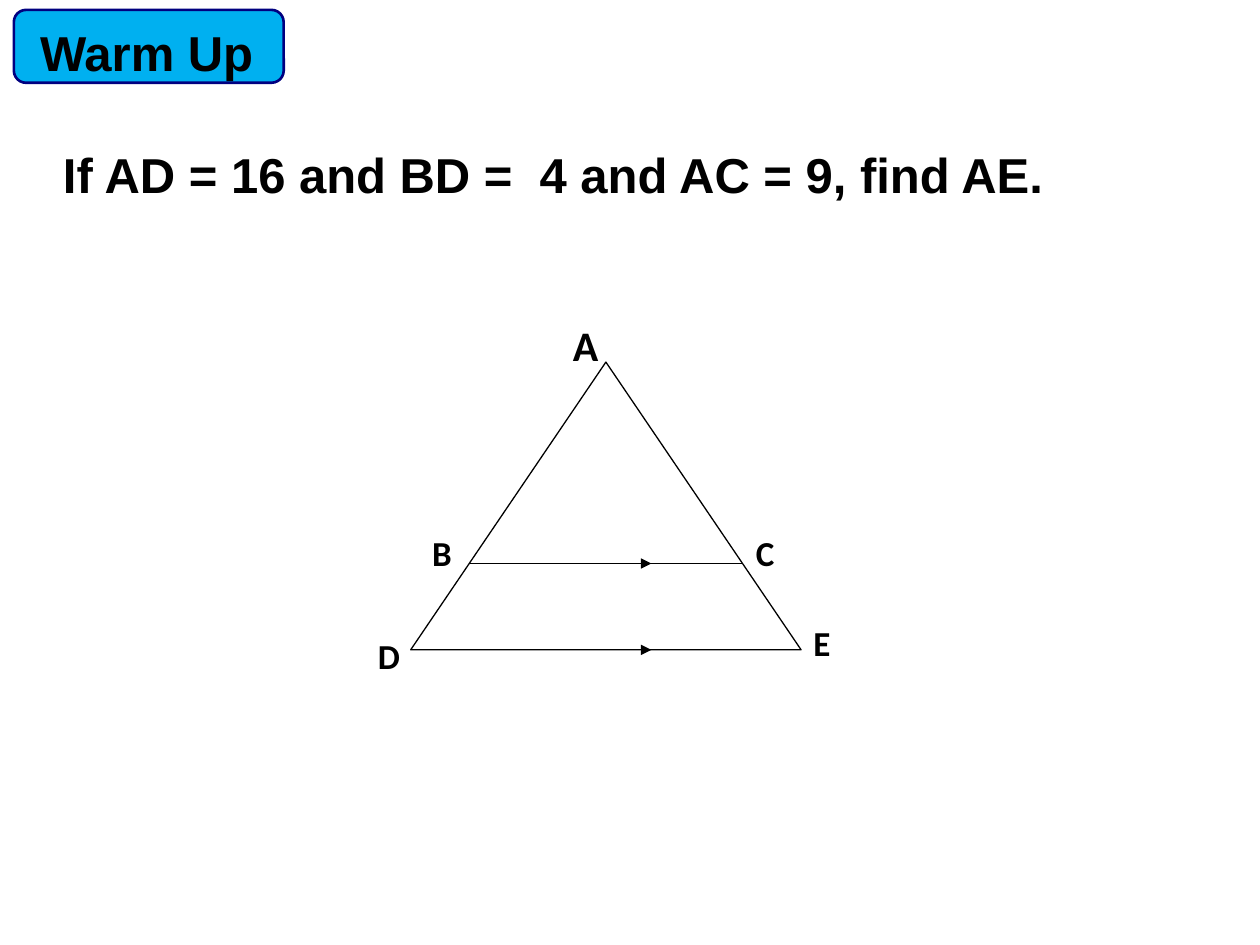
from lxml import etree
from pptx import Presentation
from pptx import util as u
from pptx.dml.color import RGBColor
from pptx.enum import shapes as s
from pptx.oxml.ns import qn

HUES = {"ink": "000000", "paper": "FFFFFF", "sky": "00B0F0", "navy": "000080"}


def tint(name):
    return RGBColor.from_string(HUES[name])


def write(host, words, box, size=28, font="Arial", lead=None, after=0, top=0.13):
    """Add a bold text box; box is left, top, width, height in cm."""
    frame = host.add_textbox(*map(u.Cm, box)).text_frame
    frame.word_wrap = True
    frame.margin_top = u.Cm(top)
    para = frame.paragraphs[0]
    para.line_spacing = lead
    para.space_after = u.Pt(after)
    run = para.add_run()
    run.text = words
    run.font.size = u.Pt(size)
    run.font.name = font
    run.font.bold = True
    run.font.color.rgb = tint("ink")


def block(host, kind, box, fill, edge, width):
    shape = host.add_shape(kind, *map(u.Cm, box))
    shape.shadow.inherit = False
    shape.fill.solid()
    shape.fill.fore_color.rgb = tint(fill)
    shape.line.color.rgb = tint(edge)
    shape.line.width = u.Pt(width)


def rule(host, start, end, y, arrow=False):
    """Add a level line, with an arrowhead at its end if asked."""
    line = host.add_connector(s.MSO_CONNECTOR.STRAIGHT,
                              *map(u.Cm, (start, y, end, y)))
    line.line.color.rgb = tint("ink")
    line.line.width = u.Pt(0.75)
    if arrow:
        edge = line.line._get_or_add_ln()
        etree.SubElement(edge, qn("a:tailEnd"), type="triangle")
    etree.SubElement(line._element.spPr, qn("a:effectLst"))


def banner(host, box):
    left, top, wide, high = box
    block(host, s.MSO_SHAPE.ROUNDED_RECTANGLE, box, "sky", "navy", 1.5)
    write(host, "Warm Up", (left + 0.28, top + 0.03, wide + 0.15, high), top=0.23)


def figure(host, box):
    """Draw triangle ADE, cut by BC parallel to DE."""
    left, top, wide, high = box
    group = host.add_group_shape().shapes
    block(group, s.MSO_SHAPE.ISOSCELES_TRIANGLE, box, "paper", "ink", 0.75)

    cut = 0.7
    mid = left + wide / 2
    half = wide / 2 * cut
    level = top + high * cut
    rule(group, mid - half, mid + half, level)
    for y in (level, top + high):
        rule(group, left + 2.41, left + 4.85, y, arrow=True)

    marks = [("A", 3.02, -1.14, 24), ("B", 0.18, 3.15, 20), ("C", 6.71, 3.15, 20),
             ("E", 7.87, 4.98, 20), ("D", -0.91, 5.23, 20)]
    for name, x, y, size in marks:
        write(group, name, (left + x, top + y, 1.8, 1.75), size=size,
              font="Calibri", lead=1.15, after=10)


def main():
    deck = Presentation()
    deck.slide_width, deck.slide_height = u.Cm(25.4), u.Cm(19.05)
    host = deck.slides.add_slide(deck.slide_layouts[6]).shapes
    banner(host, (0.28, 0.2, 5.44, 1.47))
    figure(host, (8.28, 7.3, 7.87, 5.8))
    write(host, "If AD = 16 and BD =  4 and AC = 9, find AE.",
          (1.02, 3.12, 22.05, 1.12), lead=u.Pt(24))
    deck.save("out.pptx")


if __name__ == "__main__":
    main()
